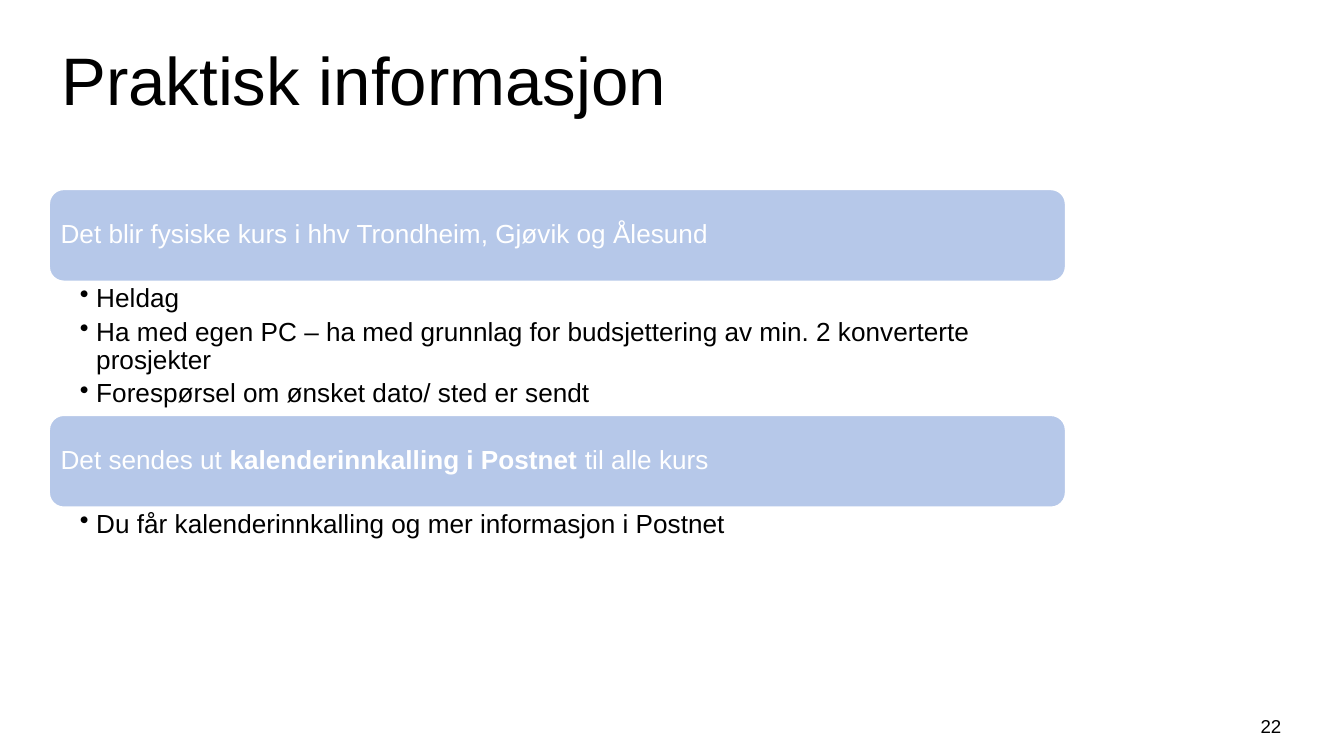
"""Build the slide with practical information about the courses."""
from dataclasses import dataclass

from lxml.etree import SubElement
from pptx import Presentation
from pptx.dml.color import RGBColor
from pptx.enum.shapes import MSO_SHAPE
from pptx.enum.text import MSO_ANCHOR, PP_ALIGN
from pptx.oxml.ns import qn
from pptx.util import Cm, Pt


@dataclass(frozen=True)
class Theme:
    font: str = "Arial"
    ink: RGBColor = RGBColor(0, 0, 0)
    paper: RGBColor = RGBColor(255, 255, 255)
    bar: RGBColor = RGBColor(0xB6, 0xC8, 0xE9)
    title: int = 36
    body: int = 14
    small: int = 10


class Page:
    def __init__(self, slide, theme):
        self.slide = slide
        self.theme = theme

    def style(self, para, size, color):
        para.font.name = self.theme.font
        para.font.size = Pt(size)
        para.font.color.rgb = color

    def text(self, words, left, top, width, height, size, align=PP_ALIGN.LEFT, anchor=MSO_ANCHOR.TOP):
        box = self.slide.shapes.add_textbox(Cm(left), Cm(top), Cm(width), Cm(height))
        frame = box.text_frame
        frame.word_wrap = True
        frame.vertical_anchor = anchor
        para = frame.paragraphs[0]
        para.text = words
        para.alignment = align
        self.style(para, size, self.theme.ink)

    def bar(self, runs, left, top, width, height):
        shape = self.slide.shapes.add_shape(
            MSO_SHAPE.ROUNDED_RECTANGLE, Cm(left), Cm(top), Cm(width), Cm(height))
        shape.shadow.inherit = False
        shape.fill.solid()
        shape.fill.fore_color.rgb = self.theme.bar
        shape.line.color.rgb = self.theme.paper
        shape.line.width = Pt(2)
        frame = shape.text_frame
        frame.word_wrap = True
        frame.vertical_anchor = MSO_ANCHOR.MIDDLE
        frame.margin_left = frame.margin_right = Cm(0.15)
        frame.margin_top = frame.margin_bottom = Cm(0.15)
        para = frame.paragraphs[0]
        para.alignment = PP_ALIGN.LEFT
        para.line_spacing = 0.9
        self.style(para, self.theme.body, self.theme.paper)
        for words, bold in runs:
            run = para.add_run()
            run.text = words
            run.font.bold = bold

    def points(self, items, left, top, width, height):
        box = self.slide.shapes.add_textbox(Cm(left), Cm(top), Cm(width), Cm(height))
        frame = box.text_frame
        frame.word_wrap = True
        frame.margin_left, frame.margin_right = Cm(0.6), Cm(0.28)
        frame.margin_top = frame.margin_bottom = Cm(0.05)
        for i, item in enumerate(items):
            para = frame.add_paragraph() if i else frame.paragraphs[0]
            para.text = item
            para.level = 1
            para.line_spacing = 0.9
            para.space_after = Pt(2.8)
            props = para._p.get_or_add_pPr()
            props.set("marL", str(Cm(0.31)))
            props.set("indent", str(-Cm(0.31)))
            SubElement(props, qn("a:buChar"), char="•")
            self.style(para, self.theme.body, self.theme.ink)


def main():
    deck = Presentation()
    deck.slide_width, deck.slide_height = Cm(25.4), Cm(14.29)
    theme = Theme()
    page = Page(deck.slides.add_slide(deck.slide_layouts[6]), theme)

    left, width, high = 0.91, 19.25, 1.78
    page.text("22", 23.55, 13.39, 0.94, 0.76, theme.small, align=PP_ALIGN.CENTER)
    page.text("Praktisk informasjon", left, 0.58, 23.29, 1.8, theme.title, anchor=MSO_ANCHOR.BOTTOM)

    parts = [
        ([("Det blir fysiske kurs i hhv Trondheim, Gjøvik og Ålesund", False)],
         ["Heldag",
          "Ha med egen PC – ha med grunnlag for budsjettering av min. 2 konverterte prosjekter",
          "Forespørsel om ønsket dato/ sted er sendt"], 2.49),
        ([("Det sendes ut ", False), ("kalenderinnkalling i Postnet ", True), ("til alle kurs", False)],
         ["Du får kalenderinnkalling og mer informasjon i Postnet"], 1.57),
    ]
    top = 3.56
    for runs, items, depth in parts:
        page.bar(runs, left, top, width, high)
        page.points(items, left, top + high, width, depth)
        top += high + depth

    deck.save("out.pptx")


if __name__ == "__main__":
    main()
